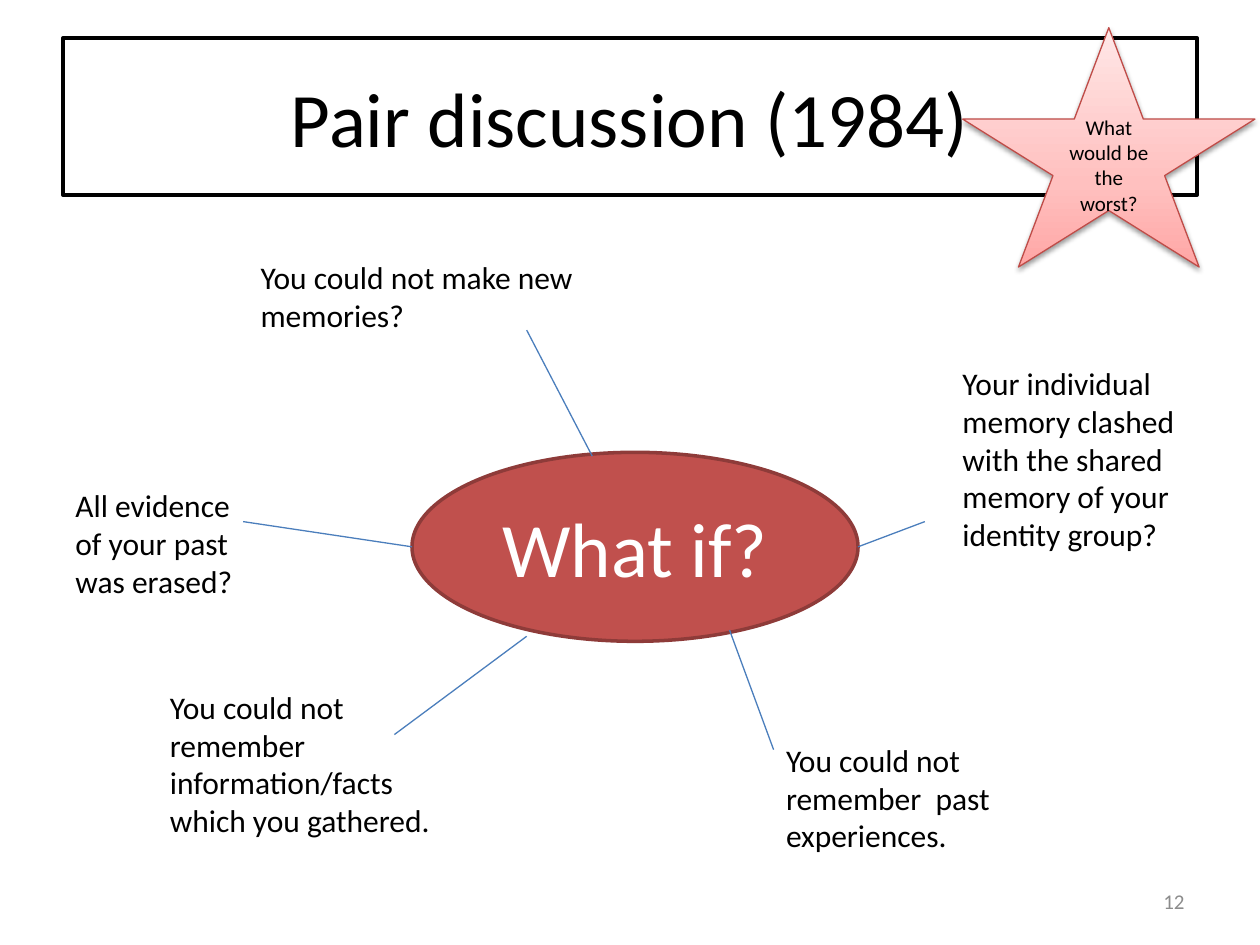
from lxml.etree import SubElement
from pptx import Presentation
from pptx.dml.color import RGBColor
from pptx.enum.shapes import MSO_CONNECTOR, MSO_SHAPE
from pptx.enum.text import MSO_ANCHOR, PP_ALIGN
from pptx.oxml import parse_xml
from pptx.oxml.ns import nsdecls, qn
from pptx.util import Inches, Pt

BLACK = RGBColor(0x00, 0x00, 0x00)
WHITE = RGBColor(0xFF, 0xFF, 0xFF)
GREY = RGBColor(0x8C, 0x8C, 0x8C)
RED = RGBColor(0xC0, 0x50, 0x4D)
MAROON = RGBColor(0x8E, 0x3B, 0x39)
ROSE = RGBColor(0xBF, 0x4C, 0x48)
BLUE = RGBColor(0x4B, 0x7E, 0xBC)

# Content: title, hub, star, and ideas as (text, box, spoke start, spoke end)
TITLE = "Pair discussion (1984)"
HUB = "What if?"
STAR = "What would be the worst?"
NUMBER = "12"
IDEAS = [
    ("You could not make new memories?",
     (1.97, 2, 2.8, 0.71), (4.7, 3.62), (4.18, 2.62)),
    ("You could not remember information/facts which you gathered.",
     (1.25, 5.41, 2.6, 1.31), (4.18, 5.05), (3.13, 5.83)),
    ("You could not remember  past experiences.",
     (6.14, 5.83, 2.6, 1.01), (5.79, 5), (6.14, 5.95)),
    ("All evidence of your past was erased?",
     (0.5, 3.81, 1.51, 1.01), (3.27, 4.34), (1.93, 4.14)),
    ("Your individual memory clashed with the shared memory of your "
     "identity group?",
     (7.54, 2.84, 1.99, 1.62), (6.81, 4.34), (7.34, 4.14)),
]
STOPS = [(0, "FFA6A5"), (35, "FFC0BF"), (100, "FFE7E7")]

deck = Presentation()
deck.slide_width, deck.slide_height = Inches(10), Inches(7.5)
slide = deck.slides.add_slide(deck.slide_layouts[5])
shapes = slide.shapes


def inches(nums):
    return [Inches(n) for n in nums]


def write(shape, text, size, color=BLACK, align=PP_ALIGN.LEFT,
          anchor=MSO_ANCHOR.TOP):
    frame = shape.text_frame
    frame.word_wrap = True
    frame.vertical_anchor = anchor
    para = frame.paragraphs[0]
    para.text = text
    para.alignment = align
    para.font.name = "Calibri"
    para.font.size = Pt(size)
    para.font.color.rgb = color


def paint(shape, fill, line, width):
    if fill is not None:
        shape.fill.solid()
        shape.fill.fore_color.rgb = fill
    shape.line.color.rgb = line
    shape.line.width = Pt(width)


def add_label(text, box, size, **style):
    write(shapes.add_textbox(*inches(box)), text, size, **style)


def add_spoke(start, end):
    spoke = shapes.add_connector(MSO_CONNECTOR.STRAIGHT, *inches(start + end))
    spoke.line.color.rgb = BLUE
    spoke.line.width = Pt(0.75)
    SubElement(spoke._element.spPr, qn("a:effectLst"))


def add_figure(kind, box, text, size, color, fill, line, width):
    figure = shapes.add_shape(kind, *inches(box))
    figure.shadow.inherit = False
    paint(figure, fill, line, width)
    write(figure, text, size, color, PP_ALIGN.CENTER, MSO_ANCHOR.MIDDLE)
    return figure


# Title
title = shapes.title
title.left, title.top, title.width, title.height = inches((0.5, 0.3, 9, 1.25))
paint(title, WHITE, BLACK, 2)
write(title, TITLE, 44, align=PP_ALIGN.CENTER, anchor=MSO_ANCHOR.MIDDLE)

# Hub with its ideas
add_figure(MSO_SHAPE.OVAL, (3.27, 3.59, 3.54, 1.5), HUB, 44, WHITE,
           RED, MAROON, 2)
for text, box, start, end in IDEAS:
    add_spoke(start, end)
    add_label(text, box, 18)

# Star with gradient and soft shadow
star = add_figure(MSO_SHAPE.STAR_5_POINT, (7.64, 0.22, 2.32, 1.9), STAR, 12,
                  BLACK, None, ROSE, 0.75)
stops = "".join(f'<a:gs pos="{pos * 1000}"><a:srgbClr val="{tint}"/></a:gs>'
                for pos, tint in STOPS)
props = star._element.spPr
props.find(qn("a:prstGeom")).addnext(parse_xml(
    f'<a:gradFill {nsdecls("a")} rotWithShape="1"><a:gsLst>{stops}</a:gsLst>'
    '<a:lin ang="16200000" scaled="0"/></a:gradFill>'))
props.find(qn("a:effectLst")).append(parse_xml(
    f'<a:outerShdw {nsdecls("a")} blurRad="{Pt(3.1)}" dist="{Pt(1.6)}" '
    'dir="5400000" rotWithShape="0"><a:srgbClr val="000000">'
    '<a:alpha val="38000"/></a:srgbClr></a:outerShdw>'))

# Slide number
add_label(NUMBER, (7.17, 6.95, 2.33, 0.4), 12, color=GREY,
          align=PP_ALIGN.RIGHT, anchor=MSO_ANCHOR.MIDDLE)

deck.save("out.pptx")
